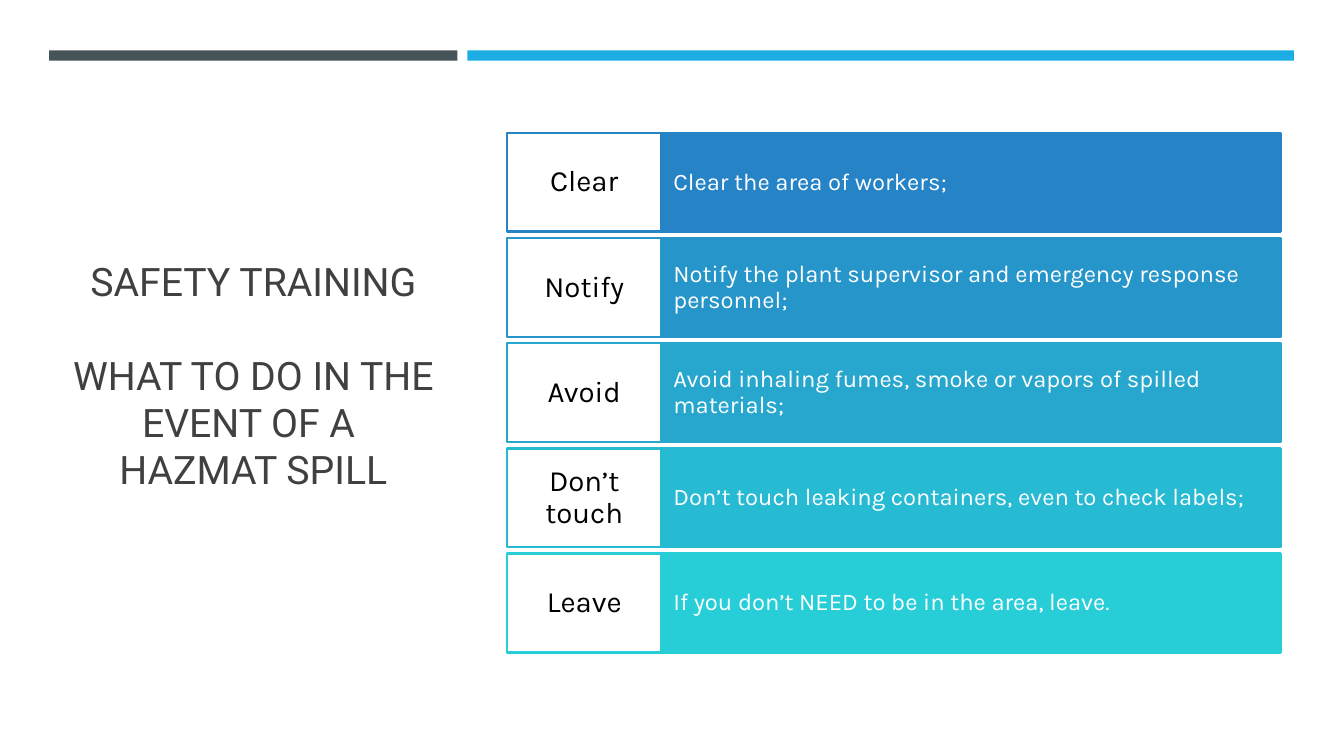
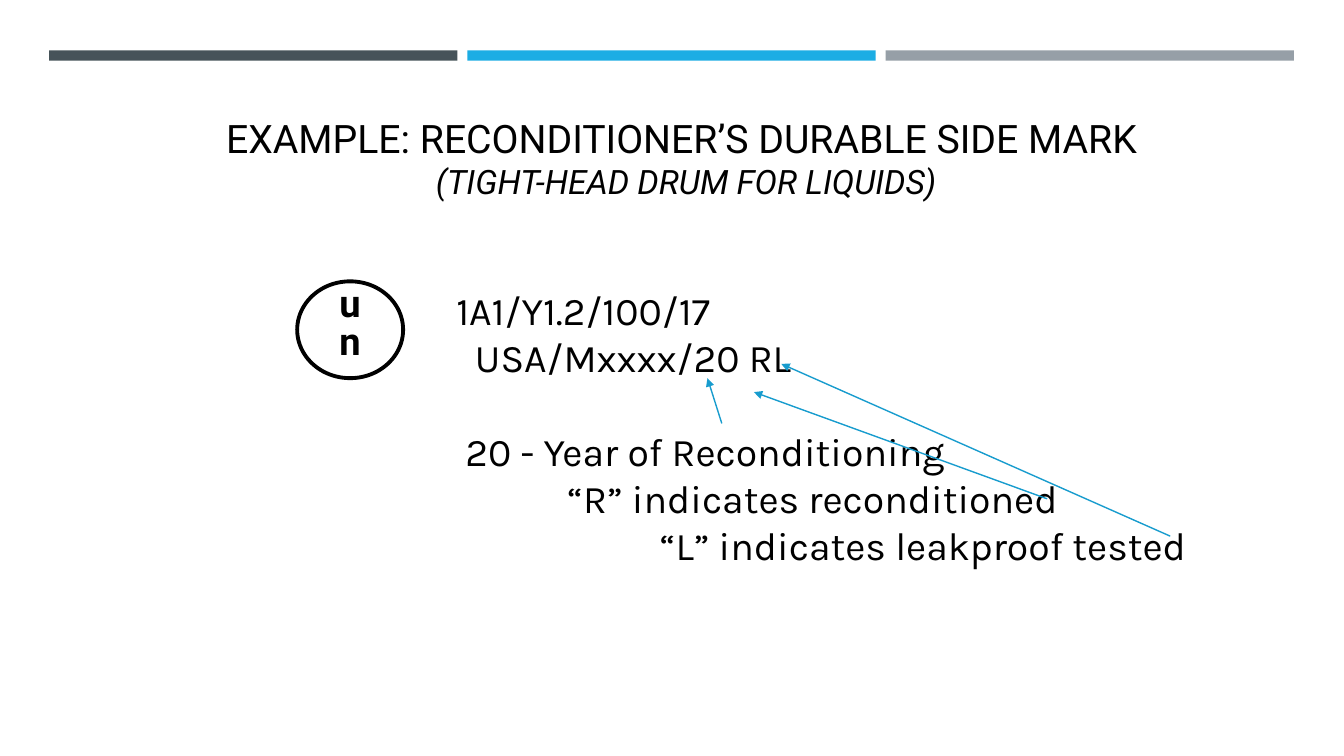
from lxml.etree import SubElement
from pptx import Presentation
from pptx.dml.color import RGBColor
from pptx.enum.shapes import MSO_CONNECTOR, MSO_SHAPE
from pptx.enum.text import MSO_ANCHOR, MSO_AUTO_SIZE, PP_ALIGN
from pptx.oxml.ns import qn
from pptx.util import Cm, Pt

COLORS = {
    "ink": "000000", "title": "404040", "paper": "FFFFFF",
    "slate": "465359", "sky": "1CADE4", "grey": "969FA7", "arrow": "189CCE",
}
HEADING, BODY = "Roboto", "Karla"
BLANK_LINE = 33.5

BAND_LEFT, BAND_TOP, BAND_WIDTH, BAND_HEIGHT, BAND_GAP = 1.24, 1.27, 10.29, 0.26, 0.25

SPILL_TITLE = [
    ("SAFETY TRAINING", {}),
    ("WHAT TO DO IN THE EVENT OF A \vHAZMAT SPILL", {"before": BLANK_LINE}),
]
SPILL_STEPS = [
    ("Clear", "Clear the area of workers;", "2683C6"),
    ("Notify", "Notify the plant supervisor and emergency response personnel;", "2695CA"),
    ("Avoid", "Avoid inhaling fumes, smoke or vapors of spilled materials;", "27A7CE"),
    ("Don’t touch", "Don’t touch leaking containers, even to check labels;", "27BAD3"),
    ("Leave", "If you don’t NEED to be in the area, leave.", "27CED7"),
]
STEP_LEFT, STEP_TOP, STEP_HEIGHT, STEP_PITCH = 12.78, 3.35, 2.49, 2.65
LABEL_WIDTH, ACTION_WIDTH = 3.89, 15.6

MARK_TITLE = [
    ("EXAMPLE: RECONDITIONER’S DURABLE SIDE MARK ", {}),
    ("(TIGHT-HEAD DRUM FOR LIQUIDS)", {"size": 24, "italic": True}),
]
MARK_LINES = [
    ("1A1/Y1.2/100/17", {}),
    ("USA/Mxxxx/20 RL", {"indent": 0.47}),
    ("20 - Year of Reconditioning", {"indent": 0.23, "before": BLANK_LINE}),
    ("“R” indicates reconditioned", {"indent": 2.8}),
    ("“L” indicates leakproof tested", {"indent": 5.13}),
]
MARK_ARROWS = [
    (18.19, 10.67, 17.83, 9.53),
    (26.39, 12.57, 19, 9.88),
    (29.49, 13.51, 19.69, 9.17),
]


def rgb(color):
    return RGBColor.from_string(COLORS.get(color, color))


def write(frame, lines, font=BODY, size=28, color="ink", align=PP_ALIGN.LEFT,
          anchor=MSO_ANCHOR.TOP, insets=(0.25, 0.13, 0.25, 0.13),
          spacing=1.0, bold=False, wrap=True):
    frame.word_wrap = wrap
    frame.auto_size = MSO_AUTO_SIZE.NONE
    frame.vertical_anchor = anchor
    (frame.margin_left, frame.margin_top,
     frame.margin_right, frame.margin_bottom) = [Cm(inset) for inset in insets]
    for number, (text, special) in enumerate(lines):
        paragraph = frame.add_paragraph() if number else frame.paragraphs[0]
        paragraph.text = text
        paragraph.alignment = align
        paragraph.line_spacing = spacing
        paragraph.space_before = Pt(special.get("before", 0))
        paragraph.space_after = Pt(0)
        if "indent" in special:
            paragraph._p.get_or_add_pPr().set("marL", str(Cm(special["indent"])))
        for run in paragraph.runs:
            run.font.name = font
            run.font.size = Pt(special.get("size", size))
            run.font.bold = bold
            run.font.italic = special.get("italic", False)
            run.font.color.rgb = rgb(color)


def add_outline(slide, preset, place, fill=None, line=None, weight=1.75):
    outline = slide.shapes.add_shape(preset, *[Cm(length) for length in place])
    outline.shadow.inherit = False
    if fill:
        outline.fill.solid()
        outline.fill.fore_color.rgb = rgb(fill)
    else:
        outline.fill.background()
    if line:
        outline.line.color.rgb = rgb(line)
        outline.line.width = Pt(weight)
    else:
        outline.line.fill.background()
    return outline


def add_bands(slide, bands):
    left = BAND_LEFT
    for color, columns in bands:
        width = columns * BAND_WIDTH + (columns - 1) * BAND_GAP
        add_outline(slide, MSO_SHAPE.RECTANGLE, (left, BAND_TOP, width, BAND_HEIGHT), color)
        left += width + BAND_GAP


def add_titled_slide(deck, lines, place, bands, **text_format):
    slide = deck.slides.add_slide(deck.slide_layouts[5])
    title = slide.shapes.title
    title.left, title.top, title.width, title.height = [Cm(length) for length in place]
    write(title.text_frame, lines, font=HEADING, align=PP_ALIGN.CENTER, **text_format)
    add_bands(slide, bands)
    return slide


def add_arrow(slide, ends):
    arrow = slide.shapes.add_connector(MSO_CONNECTOR.STRAIGHT, *[Cm(length) for length in ends])
    arrow.line.color.rgb = rgb("arrow")
    arrow.line.width = Pt(1)
    SubElement(arrow.line._get_or_add_ln(), qn("a:tailEnd"), type="triangle")
    SubElement(arrow._element.spPr, qn("a:effectLst"))


def build_spill_slide(deck):
    slide = add_titled_slide(deck, SPILL_TITLE, (1.24, 2.9, 10.29, 13.08),
                             [("slate", 1), ("sky", 2)],
                             color="title", anchor=MSO_ANCHOR.MIDDLE)
    for number, (label, action, color) in enumerate(SPILL_STEPS):
        top = STEP_TOP + number * STEP_PITCH
        action_box = add_outline(
            slide, MSO_SHAPE.RECTANGLE,
            (STEP_LEFT + LABEL_WIDTH, top, ACTION_WIDTH, STEP_HEIGHT), color, color)
        write(action_box.text_frame, [(action, {})], size=17, color="paper",
              anchor=MSO_ANCHOR.MIDDLE, insets=(0.3, 0.64, 0.3, 0.64), spacing=0.9)
        label_box = add_outline(
            slide, MSO_SHAPE.RECTANGLE,
            (STEP_LEFT, top, LABEL_WIDTH, STEP_HEIGHT), "paper", color)
        write(label_box.text_frame, [(label, {})], size=21, align=PP_ALIGN.CENTER,
              anchor=MSO_ANCHOR.MIDDLE, insets=(0.2, 0.25, 0.2, 0.25), spacing=0.9)


def build_mark_slide(deck):
    slide = add_titled_slide(deck, MARK_TITLE, (1.98, 2.31, 30.63, 2.9),
                             [("slate", 1), ("sky", 1), ("grey", 1)],
                             anchor=MSO_ANCHOR.BOTTOM)
    un_symbol = add_outline(slide, MSO_SHAPE.OVAL, (7.49, 7.09, 2.67, 2.44),
                            line="ink", weight=2.75)
    write(un_symbol.text_frame, [("u", {}), ("n", {})], font=HEADING, size=27.2,
          align=PP_ALIGN.CENTER, anchor=MSO_ANCHOR.MIDDLE,
          insets=(0.25, 0.13, 0.25, 0.36), spacing=Pt(27), bold=True, wrap=False)
    marking = slide.shapes.add_textbox(Cm(11.25), Cm(7.09), Cm(20.14), Cm(7.44))
    write(marking.text_frame, MARK_LINES)
    for ends in MARK_ARROWS:
        add_arrow(slide, ends)


def main():
    deck = Presentation()
    deck.slide_width, deck.slide_height = Cm(33.87), Cm(19.05)
    build_spill_slide(deck)
    build_mark_slide(deck)
    deck.save("out.pptx")


if __name__ == "__main__":
    main()
